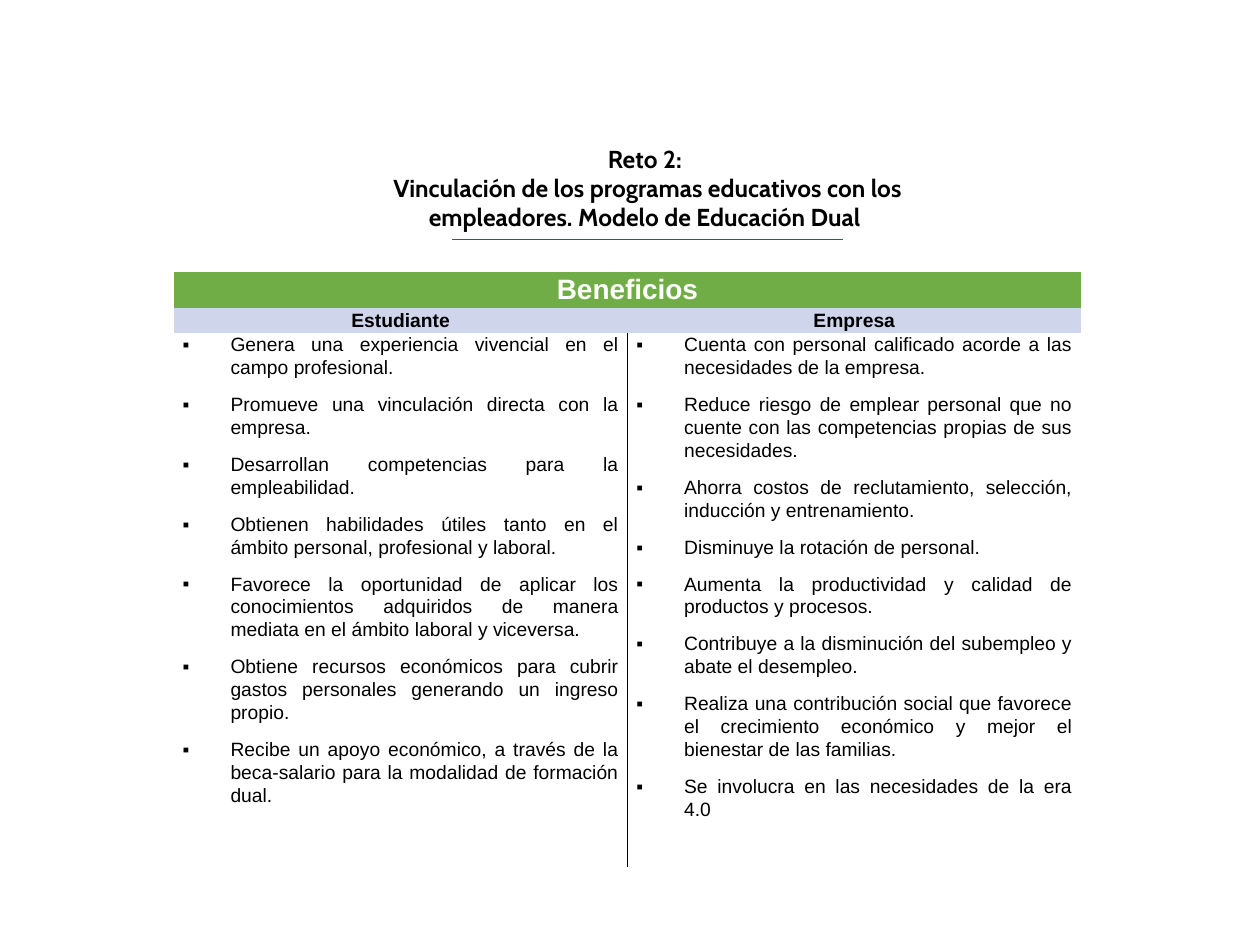
from lxml.etree import SubElement
from pptx import Presentation
from pptx.dml.color import RGBColor
from pptx.enum.shapes import MSO_CONNECTOR
from pptx.enum.text import MSO_ANCHOR, MSO_AUTO_SIZE, PP_ALIGN
from pptx.oxml import parse_xml
from pptx.oxml.ns import nsdecls, qn
from pptx.util import Inches, Pt

TITLE = [
    "Reto 2: ",
    "Vinculación de los programas educativos con los empleadores. Modelo de Educación Dual ",
]
HEAD = "Beneficios"
LISTS = {
    "Estudiante": [
        "Genera una experiencia vivencial en el campo profesional.",
        "Promueve una vinculación directa con la empresa.",
        "Desarrollan competencias para la empleabilidad.",
        "Obtienen habilidades útiles tanto en el ámbito personal, profesional y laboral.",
        "Favorece la oportunidad de aplicar los conocimientos adquiridos de manera mediata en el ámbito laboral y viceversa.",
        "Obtiene recursos económicos para cubrir gastos personales generando un ingreso propio.",
        "Recibe un apoyo económico, a través de la beca-salario para la modalidad de formación dual.",
    ],
    "Empresa": [
        "Cuenta con personal calificado acorde a las necesidades de la empresa.",
        "Reduce riesgo de emplear personal que no cuente con las competencias propias de sus necesidades.",
        "Ahorra costos de reclutamiento, selección, inducción y entrenamiento.",
        "Disminuye la rotación de personal.",
        "Aumenta la productividad y calidad de productos y procesos.",
        "Contribuye a la disminución del subempleo y abate el desempleo.",
        "Realiza una contribución social que favorece el crecimiento económico y mejor el bienestar de las familias.",
        "Se involucra en las necesidades de la era 4.0",
    ],
}
HUES = {"text": "000000", "head": "FFFFFF", "green": "70AD47",
        "pale": "CFD5EA", "rule": "375A59"}
ROWS = [0.22, 0.18, 4.24]
WIDE = 3.6
PLAIN = "{2D5ABB26-0587-4C30-8999-92F81FD0307C}"


def hue(name):
    return RGBColor.from_string(HUES[name])


def write(frame, lines, size, face="Arial", color="text", bold=True,
          align=PP_ALIGN.CENTER, after=8, space=1.07, mark=None):
    for i, line in enumerate(lines):
        para = frame.paragraphs[0] if i == 0 else frame.add_paragraph()
        para.alignment = align
        para.line_spacing = space
        para.space_before = Pt(0)
        para.space_after = Pt(after)
        if mark:
            props = para._p.get_or_add_pPr()
            props.set("marL", str(Inches(0.38)))
            props.set("indent", str(-Inches(0.38)))
            SubElement(props, qn("a:buFont"), typeface="Arial")
            SubElement(props, qn("a:buChar"), char=mark)
        run = para.add_run()
        run.text = line
        font = run.font
        font.name, font.size, font.bold = face, Pt(size), bold
        font.color.rgb = hue(color)


def paint(cell, color=None):
    cell.margin_left = cell.margin_right = Inches(0.07)
    cell.margin_top = cell.margin_bottom = 0
    if color:
        cell.fill.solid()
        cell.fill.fore_color.rgb = hue(color)
    else:
        cell.fill.background()


def edge(cell, side):
    cell._tc.get_or_add_tcPr().insert(0, parse_xml(
        f'<a:ln{side} {nsdecls("a")} w="{Pt(1)}"><a:solidFill>'
        f'<a:srgbClr val="{HUES["text"]}"/></a:solidFill></a:ln{side}>'))


def main():
    deck = Presentation()
    deck.slide_width, deck.slide_height = Inches(10), Inches(7.5)
    slide = deck.slides.add_slide(deck.slide_layouts[5])

    rule = slide.shapes.add_connector(
        MSO_CONNECTOR.STRAIGHT, Inches(3.59), Inches(1.9), Inches(6.69), Inches(1.9))
    rule.line.color.rgb = hue("rule")
    rule.line.width = Pt(1)
    SubElement(rule._element.spPr, qn("a:effectLst"))

    title = slide.shapes.title
    title.left, title.top = Inches(2.64), Inches(1.09)
    title.width, title.height = Inches(5), Inches(0.81)
    frame = title.text_frame
    frame.word_wrap = True
    frame.auto_size = MSO_AUTO_SIZE.SHAPE_TO_FIT_TEXT
    frame.vertical_anchor = MSO_ANCHOR.TOP
    write(frame, TITLE, 14, "Cabin", after=0, space=1.0)

    shape = slide.shapes.add_table(
        len(ROWS), len(LISTS), Inches(1.38), Inches(2.16),
        Inches(WIDE * len(LISTS)), Inches(sum(ROWS)))
    table = shape.table
    table.first_row = table.horz_banding = False
    table._tbl.tblPr.find(qn("a:tableStyleId")).text = PLAIN
    for row, high in zip(table.rows, ROWS):
        row.height = Inches(high)
    for col in table.columns:
        col.width = Inches(WIDE)

    top = table.cell(0, 0)
    top.merge(table.cell(0, 1))
    paint(top, "green")
    write(top.text_frame, [HEAD], 16, color="head")
    for i, (name, items) in enumerate(LISTS.items()):
        label, body = table.cell(1, i), table.cell(2, i)
        paint(label, "pale")
        write(label.text_frame, [name], 11)
        paint(body)
        edge(body, "RL"[i])
        write(body.text_frame, items, 11, bold=False,
              align=PP_ALIGN.JUSTIFY, mark="▪")

    deck.save("out.pptx")


if __name__ == "__main__":
    main()
